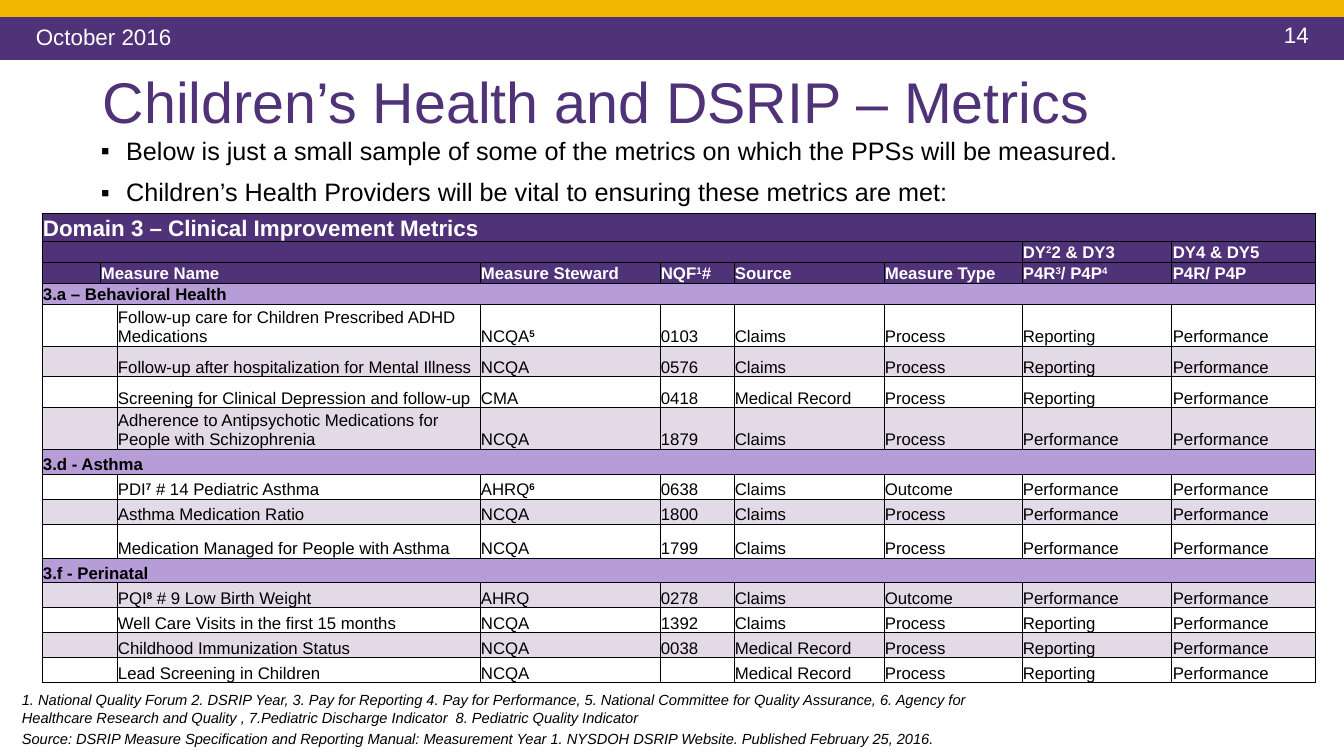
from lxml import etree
from pptx import Presentation
from pptx import util as u
from pptx.dml.color import RGBColor
from pptx.enum import shapes, text
from pptx.oxml.ns import qn

PURPLE, GOLD, LILAC, PALE = "503278", "F2B800", "B69DD7", "E2DAE6"
WHITE, BLACK = "FFFFFF", "000000"
FONT = "Arial"


def px(n):
    return u.Emu(round(n * 914400 / 100.8))


def rgb(color):
    return RGBColor.from_string(color)


def add_text(p, value, size=12, color=BLACK, bold=False, italic=False):
    """Fill a paragraph; text between ^ marks is bold superscript."""
    for i, part in enumerate(value.split("^")):
        if not part:
            continue
        r = p.add_run()
        r.text = part
        f = r.font
        f.name, f.size, f.italic = FONT, u.Pt(size), italic
        f.bold = bold or i % 2 == 1
        f.color.rgb = rgb(color)
        if i % 2:
            r._r.get_or_add_rPr().set("baseline", "30000")
    if not value:
        etree.SubElement(p._p, qn("a:endParaRPr"), sz=str(size * 100))


class Deck:
    def __init__(self):
        self.prs = Presentation()
        self.prs.slide_width, self.prs.slide_height = px(1344), px(756)
        self.s = self.prs.slides.add_slide(self.prs.slide_layouts[6])

    def bar(self, x, y, w, h, color):
        sp = self.s.shapes.add_shape(shapes.MSO_SHAPE.RECTANGLE, px(x), px(y), px(w), px(h))
        sp.shadow.inherit = False
        sp.fill.solid()
        sp.fill.fore_color.rgb = rgb(color)
        sp.line.fill.background()

    def text(self, x, y, w, h, *lines, middle=False, wrap=True, spacing=None,
             bullet=None, gap=0, **fmt):
        tf = self.s.shapes.add_textbox(px(x), px(y), px(w), px(h)).text_frame
        tf.word_wrap = wrap
        if middle:
            tf.vertical_anchor = text.MSO_ANCHOR.MIDDLE
        for i, line in enumerate(lines):
            p = tf.add_paragraph() if i else tf.paragraphs[0]
            if bullet:
                pPr = p._p.get_or_add_pPr()
                pPr.set("marL", "228600")
                pPr.set("indent", "-228600")
                etree.SubElement(pPr, qn("a:buFont"), typeface=FONT)
                etree.SubElement(pPr, qn("a:buChar"), char=bullet)
            if spacing:
                p.line_spacing = spacing
            if i:
                p.space_before = u.Pt(gap)
            add_text(p, line, **fmt)

    def cell(self, c, value, fill, **fmt):
        c.margin_left = c.margin_right = c.margin_top = px(1)
        c.margin_bottom = 0
        c.vertical_anchor = text.MSO_ANCHOR.BOTTOM
        tcPr = c._tc.get_or_add_tcPr()
        for side in ("lnL", "lnR", "lnT", "lnB"):
            ln = etree.SubElement(tcPr, qn("a:" + side), w="6350")
            solid = etree.SubElement(ln, qn("a:solidFill"))
            etree.SubElement(solid, qn("a:srgbClr"), val=BLACK)
        c.fill.solid()
        c.fill.fore_color.rgb = rgb(fill)
        tf = c.text_frame
        for i, line in enumerate(value.split("\n")):
            add_text(tf.add_paragraph() if i else tf.paragraphs[0], line, **fmt)

    def table(self, x, y, cols, rows):
        """Each row is (height, fill, [(text, span), ...], format)."""
        height = sum(row[0] for row in rows)
        tbl = self.s.shapes.add_table(len(rows), len(cols), px(x), px(y),
                                      px(sum(cols)), px(height)).table
        tbl.first_row = tbl.horz_banding = False
        for col, w in zip(tbl.columns, cols):
            col.width = px(w)
        for i, (h, fill, cells, fmt) in enumerate(rows):
            tbl.rows[i].height = px(h)
            j = 0
            for value, span in cells:
                for k in range(span):
                    self.cell(tbl.cell(i, j + k), "" if k else value, fill, **fmt)
                if span > 1:
                    tbl.cell(i, j).merge(tbl.cell(i, j + span - 1))
                j += span


def header(h, *cells, size=12):
    return h, PURPLE, cells, dict(size=size, color=WHITE, bold=True)


def section(h, title, span):
    return h, LILAC, [(title, span)], dict(bold=True)


def measure(h, fill, lead, *values):
    return h, fill, [("", lead)] + [(v, 1) for v in values], {}


CLAIMS, RECORD = "Claims", "Medical Record"
PROC, OUT = "Process", "Outcome"
REP, PERF = "Reporting", "Performance"
SHARED_COLS = [363, 180, 74, 150, 138, 150, 144]


def main():
    d = Deck()

    # Top bands
    d.bar(0, 17, 1344, 43, PURPLE)
    d.bar(0, 0, 1344, 17, GOLD)
    d.text(1274, 16, 48, 37, "14", wrap=False, size=16, color=WHITE)
    d.text(26, 16, 605, 42, "October 2016", middle=True, size=16, color=WHITE)

    # Title and bullets
    d.text(93, 72, 1159, 65, "Children’s Health and DSRIP – Metrics",
           middle=True, spacing=0.9, size=41, color=PURPLE)
    d.text(91, 134, 1226, 76,
           "Below is just a small sample of some of the metrics on which the PPSs will be measured.",
           "Children’s Health Providers will be vital to ensuring these metrics are met:",
           bullet="▪", spacing=0.9, gap=10, size=18)

    # Behavioral health table
    d.table(42, 213, [58, 17] + SHARED_COLS, [
        header(26, ("Domain 3 – Clinical Improvement Metrics", 9), size=16),
        header(20, ("", 7), ("DY^2^2 & DY3", 1), ("DY4 & DY5", 1)),
        header(20, ("", 1), ("Measure Name", 2), ("Measure Steward", 1), ("NQF^1^#", 1),
               ("Source", 1), ("Measure Type", 1), ("P4R^3^/ P4P^4^", 1), ("P4R/ P4P", 1)),
        section(20, "3.a – Behavioral Health", 9),
        measure(38, WHITE, 2, "Follow-up care for Children Prescribed ADHD\nMedications",
                "NCQA^5^", "0103", CLAIMS, PROC, REP, PERF),
        measure(31, PALE, 2, "Follow-up after hospitalization for Mental Illness",
                "NCQA", "0576", CLAIMS, PROC, REP, PERF),
        measure(31, WHITE, 2, "Screening for Clinical Depression and follow-up",
                "CMA", "0418", RECORD, PROC, REP, PERF),
        measure(39, PALE, 2, "Adherence to Antipsychotic Medications for People with Schizophrenia",
                "NCQA", "1879", CLAIMS, PROC, PERF, PERF),
    ])

    # Asthma and perinatal table
    d.table(42, 449, [75] + SHARED_COLS, [
        section(25, "3.d - Asthma", 8),
        measure(25, WHITE, 1, "PDI^7^ # 14 Pediatric Asthma", "AHRQ^6^", "0638", CLAIMS, OUT, PERF, PERF),
        measure(25, PALE, 1, "Asthma Medication Ratio", "NCQA", "1800", CLAIMS, PROC, PERF, PERF),
        measure(34, WHITE, 1, "Medication Managed for People with Asthma",
                "NCQA", "1799", CLAIMS, PROC, PERF, PERF),
        section(25, "3.f - Perinatal", 8),
        measure(25, PALE, 1, "PQI^8^ # 9 Low Birth Weight", "AHRQ", "0278", CLAIMS, OUT, PERF, PERF),
        measure(25, WHITE, 1, "Well Care Visits in the first 15 months",
                "NCQA", "1392", CLAIMS, PROC, REP, PERF),
        measure(25, PALE, 1, "Childhood Immunization Status", "NCQA", "0038", RECORD, PROC, REP, PERF),
        measure(25, WHITE, 1, "Lead Screening in Children", "NCQA", "", RECORD, PROC, REP, PERF),
    ])

    # Footnotes and source
    d.text(12, 686, 1014, 45,
           "1. National Quality Forum 2. DSRIP Year, 3. Pay for Reporting 4. Pay for Performance, "
           "5. National Committee for Quality Assurance, 6. Agency for Healthcare Research and Quality , "
           "7.Pediatric Discharge Indicator  8. Pediatric Quality Indicator", size=10.5, italic=True)
    d.text(12, 725, 1138, 28,
           "Source: DSRIP Measure Specification and Reporting Manual: Measurement Year 1. "
           "NYSDOH DSRIP Website. Published February 25, 2016.", size=10.5, italic=True)

    d.prs.save("out.pptx")


if __name__ == "__main__":
    main()
